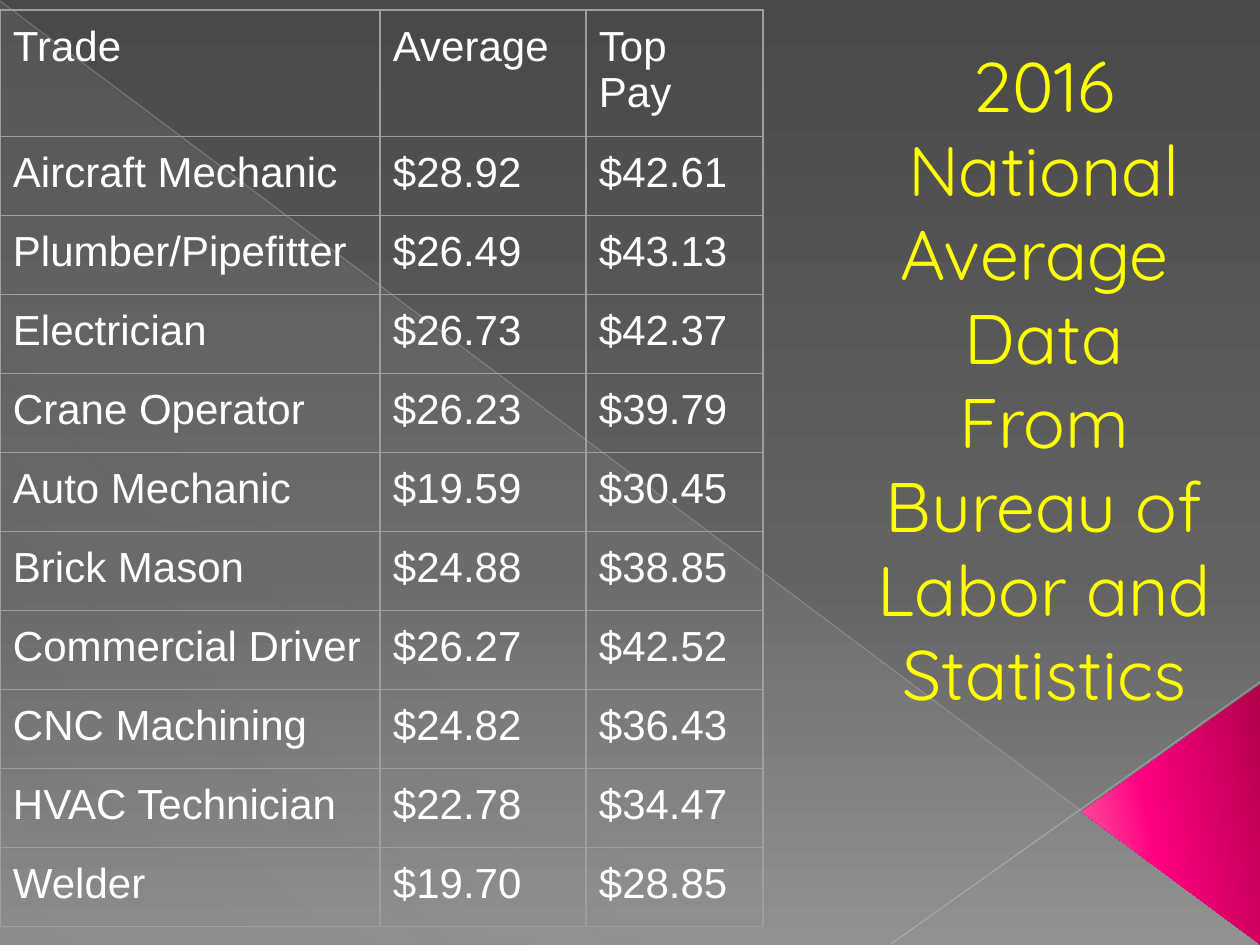
from typing import NamedTuple

from lxml import etree
from pptx import Presentation
from pptx.dml.color import RGBColor
from pptx.enum.shapes import MSO_CONNECTOR, MSO_SHAPE
from pptx.enum.text import MSO_ANCHOR, PP_ALIGN
from pptx.oxml.ns import qn
from pptx.util import Pt

LINE = MSO_CONNECTOR.STRAIGHT
RIGHT, ISO = MSO_SHAPE.RIGHT_TRIANGLE, MSO_SHAPE.ISOSCELES_TRIANGLE
LEFT, MID, TOP = PP_ALIGN.LEFT, PP_ALIGN.CENTER, MSO_ANCHOR.TOP
SCALE = 914400 / 126


class Stop(NamedTuple):
    pos: int
    tint: str
    alpha: int = 100


class Wedge(NamedTuple):
    kind: int
    box: tuple
    stops: list
    angle: int
    turn: int = 0
    adjust: float | None = None


class Rule(NamedTuple):
    ends: tuple
    tint: str
    alpha: int


class Trade(NamedTuple):
    name: str
    mean: str
    top: str


BACK = [Stop(0, "494949"), Stop(60, "626262"), Stop(100, "8B8B8B")]
VEIL = Wedge(RIGHT, (1, 3, 1258, 942),
             [Stop(0, "D2D2D2", 10), Stop(70, "D2D2D2", 8), Stop(100, "D2D2D2", 1)], 133)
PINK = Wedge(ISO, (1041, 725, 261, 179),
             [Stop(0, "B2004A"), Stop(60, "FF0082"), Stop(100, "FF66A4")], 258, 270, 0.51)
RULES = [Rule((0, 1, 1259, 944), "BEBEBE", 35),
         Rule((1260, 682, 891, 944), "C5C5C5", 45)]
TITLE = ["2016 National Average ", "Data From Bureau of Labor and Statistics"]
TRADES = [
    Trade("Trade", "Average", "Top Pay"),
    Trade("Aircraft Mechanic", "$28.92", "$42.61"),
    Trade("Plumber/Pipefitter", "$26.49", "$43.13"),
    Trade("Electrician", "$26.73", "$42.37"),
    Trade("Crane Operator", "$26.23", "$39.79"),
    Trade("Auto Mechanic", "$19.59", "$30.45"),
    Trade("Brick Mason", "$24.88", "$38.85"),
    Trade("Commercial Driver", "$26.27", "$42.52"),
    Trade("CNC Machining", "$24.82", "$36.43"),
    Trade("HVAC Technician", "$22.78", "$34.47"),
    Trade("Welder", "$19.70", "$28.85"),
]
COLS = [380, 206, 177]
ROW = 79
PAD = 13


def px(size: int) -> int:
    return round(size * SCALE)


def rgb(tint: str) -> RGBColor:
    return RGBColor.from_string(tint)


def node(parent, tag: str, **attrs):
    return etree.SubElement(parent, qn(tag), {k: str(v) for k, v in attrs.items()})


def fade(parent, alpha: int) -> None:
    if alpha < 100:
        node(parent, "a:alpha", val=alpha * 1000)


def blend(fill, props, stops: list, angle: int) -> None:
    fill.solid()
    solid = props.find(qn("a:solidFill"))
    grad = etree.Element(qn("a:gradFill"), {"rotWithShape": "1"})
    group = node(grad, "a:gsLst")
    for stop in stops:
        mark = node(group, "a:gs", pos=stop.pos * 1000)
        fade(node(mark, "a:srgbClr", val=stop.tint), stop.alpha)
    node(grad, "a:lin", ang=angle * 60000, scaled=0)
    props.replace(solid, grad)


def write(frame, texts: list, *, font: str, size: int, tint: str,
          align=LEFT, indent: int = 0) -> None:
    frame.word_wrap = True
    for i, text in enumerate(texts):
        para = frame.add_paragraph() if i else frame.paragraphs[0]
        para.alignment = align
        if indent:
            props = para._p.get_or_add_pPr()
            props.set("marL", str(px(indent)))
            props.set("indent", "0")
        run = para.add_run()
        run.text = text
        run.font.name = font
        run.font.size = Pt(size)
        run.font.color.rgb = rgb(tint)


def draw_wedge(slide, wedge: Wedge) -> None:
    shape = slide.shapes.add_shape(wedge.kind, *map(px, wedge.box))
    shape.shadow.inherit = False
    shape.line.fill.background()
    shape.rotation = wedge.turn
    if wedge.adjust is not None:
        shape.adjustments[0] = wedge.adjust
    blend(shape.fill, shape._element.spPr, wedge.stops, wedge.angle)


def draw_rule(slide, rule: Rule) -> None:
    line = slide.shapes.add_connector(LINE, *map(px, rule.ends))
    line.line.width = Pt(0.75)
    line.line.color.rgb = rgb(rule.tint)
    props = line._element.spPr
    fade(next(props.iter(qn("a:srgbClr"))), rule.alpha)
    node(props, "a:effectLst")


def frame_cell(cell, tint: str) -> None:
    cell.fill.background()
    props = cell._tc.get_or_add_tcPr()
    for i, side in enumerate("LRTB"):
        edge = node(props, f"a:ln{side}", w=Pt(0.75))
        node(node(edge, "a:solidFill"), "a:srgbClr", val=tint)
        props.insert(i, edge)


def draw_table(slide, trades: list) -> None:
    box = (0, 10, sum(COLS), ROW * len(trades))
    table = slide.shapes.add_table(len(trades), len(COLS), *map(px, box)).table
    table.first_row = table.horz_banding = False
    for col, width in zip(table.columns, COLS):
        col.width = px(width)
    for row, trade in zip(table.rows, trades):
        row.height = px(ROW)
        for cell, text in zip(row.cells, trade):
            cell.margin_left = cell.margin_right = px(PAD)
            cell.margin_top = cell.margin_bottom = px(PAD)
            cell.vertical_anchor = TOP
            write(cell.text_frame, [text], font="Arial", size=24, tint="FFFFFF")
            frame_cell(cell, "9E9E9E")


def draw_title(slide) -> None:
    frame = slide.shapes.add_textbox(*map(px, (794, 30, 433, 830))).text_frame
    frame.margin_left = frame.margin_right = px(PAD)
    frame.margin_top = frame.margin_bottom = px(PAD)
    frame.vertical_anchor = TOP
    write(frame, TITLE, font="Quicksand", size=40, tint="FFFF00", align=MID, indent=67)


def main() -> None:
    deck = Presentation()
    deck.slide_width, deck.slide_height = px(1260), px(945)
    slide = deck.slides.add_slide(deck.slide_layouts[6])
    fill = slide.background.fill
    fill.solid()
    blend(fill, next(slide.element.iter(qn("p:bgPr"))), BACK, 90)
    draw_wedge(slide, VEIL)
    for rule in RULES:
        draw_rule(slide, rule)
    draw_wedge(slide, PINK)
    draw_title(slide)
    draw_table(slide, TRADES)
    deck.save("out.pptx")


if __name__ == "__main__":
    main()
